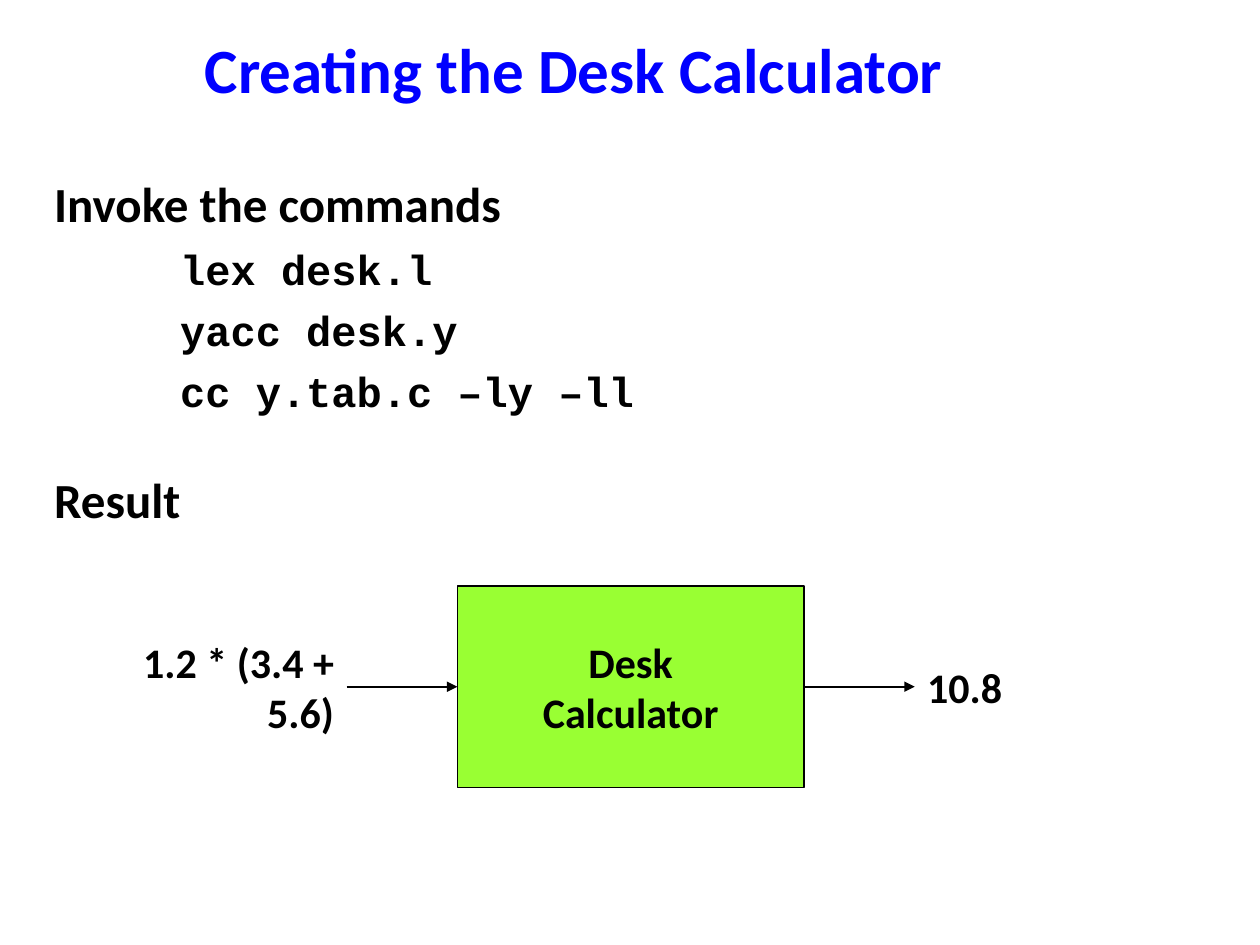
from dataclasses import dataclass

from lxml import etree
from pptx import Presentation
from pptx.dml.color import RGBColor
from pptx.enum import shapes, text
from pptx.oxml import ns
from pptx.util import Inches, Pt


@dataclass(frozen=True)
class Theme:
    sans: str = "Calibri"
    mono: str = "Courier New"
    ink: RGBColor = RGBColor(0x00, 0x00, 0x00)
    heading: RGBColor = RGBColor(0x00, 0x00, 0xFF)
    machine: RGBColor = RGBColor(0x99, 0xFF, 0x33)
    title_size: int = 36
    body_size: int = 28
    detail_size: int = 24
    line_width: int = 1


class SlideBuilder:
    def __init__(self, slide, theme):
        self.slide = slide
        self.theme = theme

    def place(self, shape, left, top, width, height):
        shape.left, shape.top = Inches(left), Inches(top)
        shape.width, shape.height = Inches(width), Inches(height)

    def add_words(self, paragraph, words, size, color=None, font=None):
        run = paragraph.add_run()
        run.text = words
        run.font.name = font or self.theme.sans
        run.font.size = Pt(size)
        run.font.bold = True
        run.font.color.rgb = color or self.theme.ink

    def fill_frame(self, frame, lines, align):
        frame.word_wrap = True
        frame.vertical_anchor = text.MSO_ANCHOR.MIDDLE
        for index, words in enumerate(lines):
            paragraph = frame.add_paragraph() if index else frame.paragraphs[0]
            paragraph.alignment = align
            self.add_words(paragraph, words, self.theme.detail_size)

    def title(self, words, *box):
        heading = self.slide.shapes.title
        self.place(heading, *box)
        frame = heading.text_frame
        frame.auto_size = text.MSO_AUTO_SIZE.NONE
        frame.vertical_anchor = text.MSO_ANCHOR.MIDDLE
        paragraph = frame.paragraphs[0]
        paragraph.alignment = text.PP_ALIGN.CENTER
        self.add_words(paragraph, words, self.theme.title_size, self.theme.heading)

    def body(self, entries, *box):
        outline = self.slide.placeholders[1]
        self.place(outline, *box)
        frame = outline.text_frame
        frame.auto_size = text.MSO_AUTO_SIZE.NONE
        for index, (words, is_command, space_before) in enumerate(entries):
            paragraph = frame.add_paragraph() if index else frame.paragraphs[0]
            paragraph.level = 2 if is_command else 0
            paragraph.space_before = Pt(space_before)
            margin, indent = (1.25, -0.25) if is_command else (0.38, -0.38)
            properties = paragraph._p.get_or_add_pPr()
            properties.set("marL", str(Inches(margin)))
            properties.set("indent", str(Inches(indent)))
            etree.SubElement(properties, ns.qn("a:buNone"))
            if is_command:
                self.add_words(paragraph, words, self.theme.detail_size, font=self.theme.mono)
            else:
                self.add_words(paragraph, words, self.theme.body_size)

    def machine(self, lines, *box):
        block = self.slide.shapes.add_shape(
            shapes.MSO_SHAPE.RECTANGLE, *map(Inches, box))
        block.shadow.inherit = False
        block.fill.solid()
        block.fill.fore_color.rgb = self.theme.machine
        block.line.color.rgb = self.theme.ink
        block.line.width = Pt(self.theme.line_width)
        self.fill_frame(block.text_frame, lines, text.PP_ALIGN.CENTER)

    def label(self, words, align, *box):
        caption = self.slide.shapes.add_textbox(*map(Inches, box))
        self.fill_frame(caption.text_frame, [words], align)

    def arrow(self, start, end, level):
        flow = self.slide.shapes.add_connector(
            shapes.MSO_CONNECTOR.STRAIGHT,
            Inches(start), Inches(level), Inches(end), Inches(level))
        flow.line.color.rgb = self.theme.ink
        flow.line.width = Pt(self.theme.line_width)
        properties = flow._element.spPr
        outline = properties.find(ns.qn("a:ln"))
        etree.SubElement(outline, ns.qn("a:tailEnd"), type="triangle")
        etree.SubElement(properties, ns.qn("a:effectLst"))


def main():
    deck = Presentation()
    deck.slide_width, deck.slide_height = Inches(10), Inches(7.5)
    builder = SlideBuilder(deck.slides.add_slide(deck.slide_layouts[1]), Theme())

    builder.title("Creating the Desk Calculator", 0.2, 0.08, 8.71, 0.92)
    builder.body([
        ("Invoke the commands", False, 0),
        ("lex desk.l", True, 6),
        ("yacc desk.y", True, 6),
        ("cc y.tab.c –ly –ll", True, 6),
        ("Result", False, 31),
    ], 0.33, 1.33, 9.06, 5.92)

    machine_left, machine_top, machine_width, machine_height = 3.63, 4.65, 2.75, 1.6
    machine_right = machine_left + machine_width
    flow_level = machine_top + machine_height / 2
    arrow_length = 0.88
    input_end = machine_left - arrow_length
    output_start = machine_right + arrow_length
    label_height = 1
    label_top = flow_level - label_height / 2
    input_width, output_width = 2.16, 1.86

    builder.machine(["Desk", "Calculator"],
                    machine_left, machine_top, machine_width, machine_height)
    builder.label("1.2 * (3.4 + 5.6)", text.PP_ALIGN.RIGHT,
                  input_end - input_width, label_top, input_width, label_height)
    builder.label("10.8", text.PP_ALIGN.LEFT,
                  output_start, label_top, output_width, label_height)
    builder.arrow(input_end, machine_left, flow_level)
    builder.arrow(machine_right, output_start, flow_level)

    deck.save("out.pptx")


if __name__ == "__main__":
    main()
